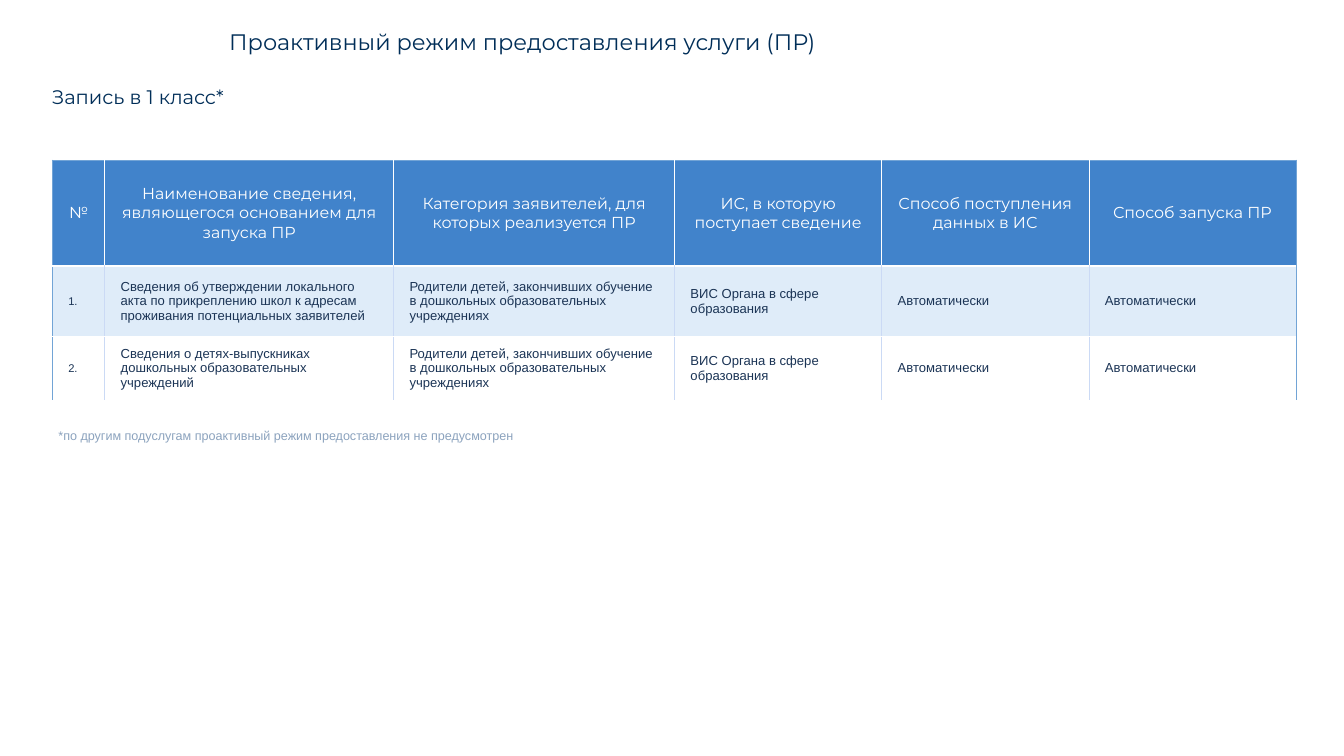
from lxml import etree
from pptx import Presentation
from pptx.dml.color import RGBColor
from pptx.enum.text import MSO_ANCHOR, MSO_AUTO_SIZE, PP_ALIGN
from pptx.oxml.ns import qn
from pptx.util import Cm, Pt

MIDDLE, TOP = MSO_ANCHOR.MIDDLE, MSO_ANCHOR.TOP
LEFT, CENTER = PP_ALIGN.LEFT, PP_ALIGN.CENTER
GROW = MSO_AUTO_SIZE.SHAPE_TO_FIT_TEXT

WHITE = RGBColor(0xFF, 0xFF, 0xFF)
NAVY = RGBColor(0x00, 0x2E, 0x58)
INK = RGBColor(0x1B, 0x34, 0x55)
GRAY = RGBColor(0x8C, 0xA3, 0xBE)
BLUE = RGBColor(0x41, 0x83, 0xCB)
BAND = RGBColor(0xDF, 0xEC, 0xF9)
EDGE = RGBColor(0x72, 0xA4, 0xD6)
RULE = RGBColor(0xCB, 0xDA, 0xF5)

HEAD_FONT, BODY_FONT = "Montserrat", "Arial"

COLS = [1.98, 10.92, 10.62, 7.83, 7.83, 7.83]
ROWS = [4.01, 2.67, 2.39]
HEADS = [
    "№",
    "Наименование сведения, являющегося основанием для запуска ПР",
    "Категория заявителей, для которых реализуется ПР",
    "ИС, в которую поступает сведение",
    "Способ поступления данных в ИС",
    "Способ запуска ПР",
]
GROUP = "Родители детей, закончивших обучение в дошкольных образовательных учреждениях"
SYSTEM = "ВИС Органа в сфере образования"
AUTO = "Автоматически"
BASES = [
    "Сведения об утверждении локального акта по прикреплению школ "
    "к адресам проживания потенциальных заявителей",
    "Сведения о детях-выпускниках дошкольных образовательных учреждений",
]


def write(frame, text, font, size, color, align=LEFT, line=None):
    frame.text = text
    para = frame.paragraphs[0]
    para.alignment = align
    para.font.name = font
    para.font.size = Pt(size)
    para.font.color.rgb = color
    if line:
        para.line_spacing = Pt(line)


def trim(frame):
    """Remove the insets and let the box grow with its text."""
    frame.margin_left = frame.margin_right = 0
    frame.margin_top = frame.margin_bottom = 0
    frame.vertical_anchor = TOP
    frame.word_wrap = True
    frame.auto_size = GROW


def add_title(slide, box):
    title = slide.shapes.title
    title.left, title.top, title.width, title.height = map(Cm, box)
    write(title.text_frame, "Проактивный режим предоставления услуги (ПР)",
          HEAD_FONT, 24, NAVY, CENTER, 27)
    trim(title.text_frame)


def add_lead(slide, box):
    frame = slide.shapes.add_textbox(*map(Cm, box)).text_frame
    write(frame, "Запись в 1 класс*", HEAD_FONT, 21, NAVY, line=15)
    trim(frame)


def add_note(slide, box):
    frame = slide.shapes.add_textbox(*map(Cm, box)).text_frame
    frame.word_wrap = True
    frame.auto_size = GROW
    write(frame, "*по другим подуслугам проактивный режим предоставления не предусмотрен",
          BODY_FONT, 13.5, GRAY)


def set_border(cell, side, color, width=1):
    props = cell._tc.get_or_add_tcPr()
    line = etree.SubElement(props, qn(f"a:ln{side}"), w=str(Pt(width)))
    fill = etree.SubElement(line, qn("a:solidFill"))
    etree.SubElement(fill, qn("a:srgbClr"), val=str(color))


def style_cell(cell, row, col):
    head = row == 0
    inner = WHITE if head else RULE
    set_border(cell, "L", EDGE if col == 0 else inner)
    set_border(cell, "R", EDGE if col == len(COLS) - 1 else inner)
    set_border(cell, "T", EDGE if head else WHITE, 3 if row == 1 else 1)
    set_border(cell, "B", WHITE, 3 if head else 1)
    cell.fill.solid()
    cell.fill.fore_color.rgb = (BLUE, BAND, WHITE)[row]
    cell.vertical_anchor = MIDDLE
    cell.margin_left = Cm(0.5 if head else 0.6)
    cell.margin_right = Cm(0.5)
    cell.margin_top = cell.margin_bottom = Cm(0.25)


def add_grid(slide, left, top):
    rows = [HEADS]
    for num, base in enumerate(BASES, 1):
        rows.append([f"{num}.", base, GROUP, SYSTEM, AUTO, AUTO])
    table = slide.shapes.add_table(
        len(ROWS), len(COLS), Cm(left), Cm(top), Cm(sum(COLS)), Cm(sum(ROWS))).table
    table.first_row = table.horz_banding = False
    for col, width in zip(table.columns, COLS):
        col.width = Cm(width)
    for r, texts in enumerate(rows):
        table.rows[r].height = Cm(ROWS[r])
        for c, text in enumerate(texts):
            cell = table.cell(r, c)
            style_cell(cell, r, c)
            if r == 0:
                write(cell.text_frame, text, HEAD_FONT, 17, WHITE, CENTER)
            else:
                write(cell.text_frame, text, BODY_FONT, 12 if c == 0 else 14, INK)


def main():
    deck = Presentation()
    deck.slide_width, deck.slide_height = Cm(50.8), Cm(28.58)
    slide = deck.slides.add_slide(deck.slide_layouts.get_by_name("Title Only"))
    left = 1.96
    add_title(slide, (left, 1.14, 35.56, 0.97))
    add_lead(slide, (left, 3.58, 33.71, 0.61))
    add_grid(slide, left + 0.02, 6.05)
    add_note(slide, (left, 16.05, 22.05, 0.84))
    deck.save("out.pptx")


if __name__ == "__main__":
    main()
